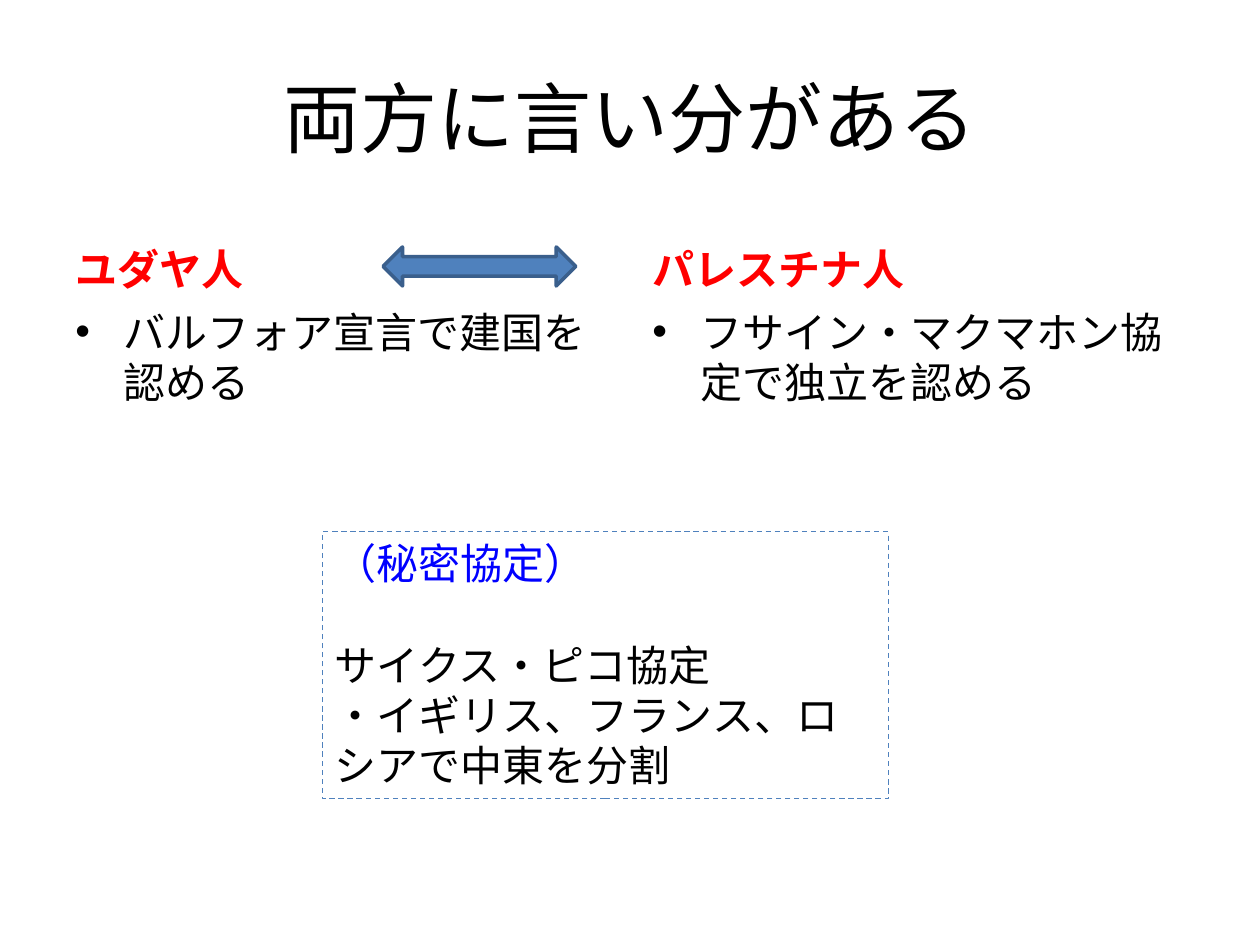
from dataclasses import dataclass

import pptx
import pptx.dml.color
import pptx.enum.dml
import pptx.enum.shapes
import pptx.enum.text
import pptx.oxml.ns
import pptx.util
from lxml import etree

Inches = pptx.util.Inches
Pt = pptx.util.Pt
RGBColor = pptx.dml.color.RGBColor
Align = pptx.enum.text.PP_ALIGN
Anchor = pptx.enum.text.MSO_ANCHOR
Preset = pptx.enum.shapes.MSO_SHAPE

BLACK = RGBColor(0x00, 0x00, 0x00)
RED = RGBColor(0xFF, 0x00, 0x00)
BLUE = RGBColor(0x00, 0x00, 0xFF)
ACCENT = RGBColor(0x4F, 0x81, 0xBD)
ACCENT_DARK = RGBColor(0x3A, 0x5F, 0x8C)

MARGIN = 0.5
COLUMN_WIDTH = 4.42
BULLET_INDENT = Inches(0.38)


@dataclass
class Line:
    text: str
    color: RGBColor = BLACK
    size: int = 24
    bold: bool = False
    bullet: bool = False
    align: Align = Align.LEFT
    space_after: int = 0


@dataclass
class Side:
    left: float
    people: str
    claim: str


def add_bullet(paragraph) -> None:
    properties = paragraph._p.get_or_add_pPr()
    properties.set("marL", str(BULLET_INDENT))
    properties.set("indent", str(-BULLET_INDENT))
    for tag, attribute, value in (("a:buFont", "typeface", "Arial"),
                                  ("a:buChar", "char", "•")):
        element = etree.SubElement(properties, pptx.oxml.ns.qn(tag))
        element.set(attribute, value)


def write_lines(frame, lines: list[Line], anchor: Anchor) -> None:
    frame.word_wrap = True
    frame.vertical_anchor = anchor
    for index, line in enumerate(lines):
        paragraph = frame.add_paragraph() if index else frame.paragraphs[0]
        if line.bullet:
            add_bullet(paragraph)
        paragraph.alignment = line.align
        if line.space_after:
            paragraph.space_after = Pt(line.space_after)
        run = paragraph.add_run()
        run.text = line.text
        font_format = {"name": "Calibri", "size": Pt(line.size), "bold": line.bold}
        for name, value in font_format.items():
            setattr(run.font, name, value)
        run.font.color.rgb = line.color


def add_text(slide, left: float, top: float, width: float, height: float,
             line: Line, anchor: Anchor) -> None:
    box = slide.shapes.add_textbox(*map(Inches, (left, top, width, height)))
    write_lines(box.text_frame, [line], anchor)


def add_outlined(slide, preset: Preset, left: float, top: float, width: float,
                 height: float, color: RGBColor, weight: float):
    shape = slide.shapes.add_shape(preset, *map(Inches, (left, top, width, height)))
    shape.shadow.inherit = False
    shape.line.color.rgb = color
    shape.line.width = Pt(weight)
    return shape


def add_side(slide, side: Side) -> None:
    add_text(slide, side.left, 1.68, COLUMN_WIDTH, 0.7,
             Line(side.people, RED, bold=True), Anchor.BOTTOM)
    add_text(slide, side.left, 2.38, COLUMN_WIDTH, 4.32,
             Line(side.claim, bullet=True), Anchor.TOP)


def main() -> None:
    presentation = pptx.Presentation()
    presentation.slide_width = Inches(10)
    presentation.slide_height = Inches(7.5)
    slide = presentation.slides.add_slide(presentation.slide_layouts[6])

    # Title
    add_text(slide, MARGIN, 0.3, 10 - 2 * MARGIN, 1.25,
             Line("両方に言い分がある", size=44, align=Align.CENTER), Anchor.MIDDLE)

    # The two sides
    sides = [
        Side(MARGIN, "ユダヤ人", "バルフォア宣言で建国を認める"),
        Side(10 - MARGIN - COLUMN_WIDTH, "パレスチナ人",
             "フサイン・マクマホン協定で独立を認める"),
    ]
    for side in sides:
        add_side(slide, side)

    # Secret agreement
    agreement = add_outlined(slide, Preset.RECTANGLE, 2.56, 4.22, 4.49, 2.12,
                             ACCENT, 0.75)
    agreement.fill.background()
    agreement.line.dash_style = pptx.enum.dml.MSO_LINE.DASH
    write_lines(agreement.text_frame, [
        Line("（秘密協定）", BLUE, space_after=29),
        Line("サイクス・ピコ協定"),
        Line("・イギリス、フランス、ロシアで中東を分割"),
    ], Anchor.TOP)

    # Opposition arrow
    opposition = add_outlined(slide, Preset.LEFT_RIGHT_ARROW, 3.04, 1.96, 1.53, 0.31,
                              ACCENT_DARK, 2)
    opposition.fill.solid()
    opposition.fill.fore_color.rgb = ACCENT

    presentation.save("out.pptx")


if __name__ == "__main__":
    main()
